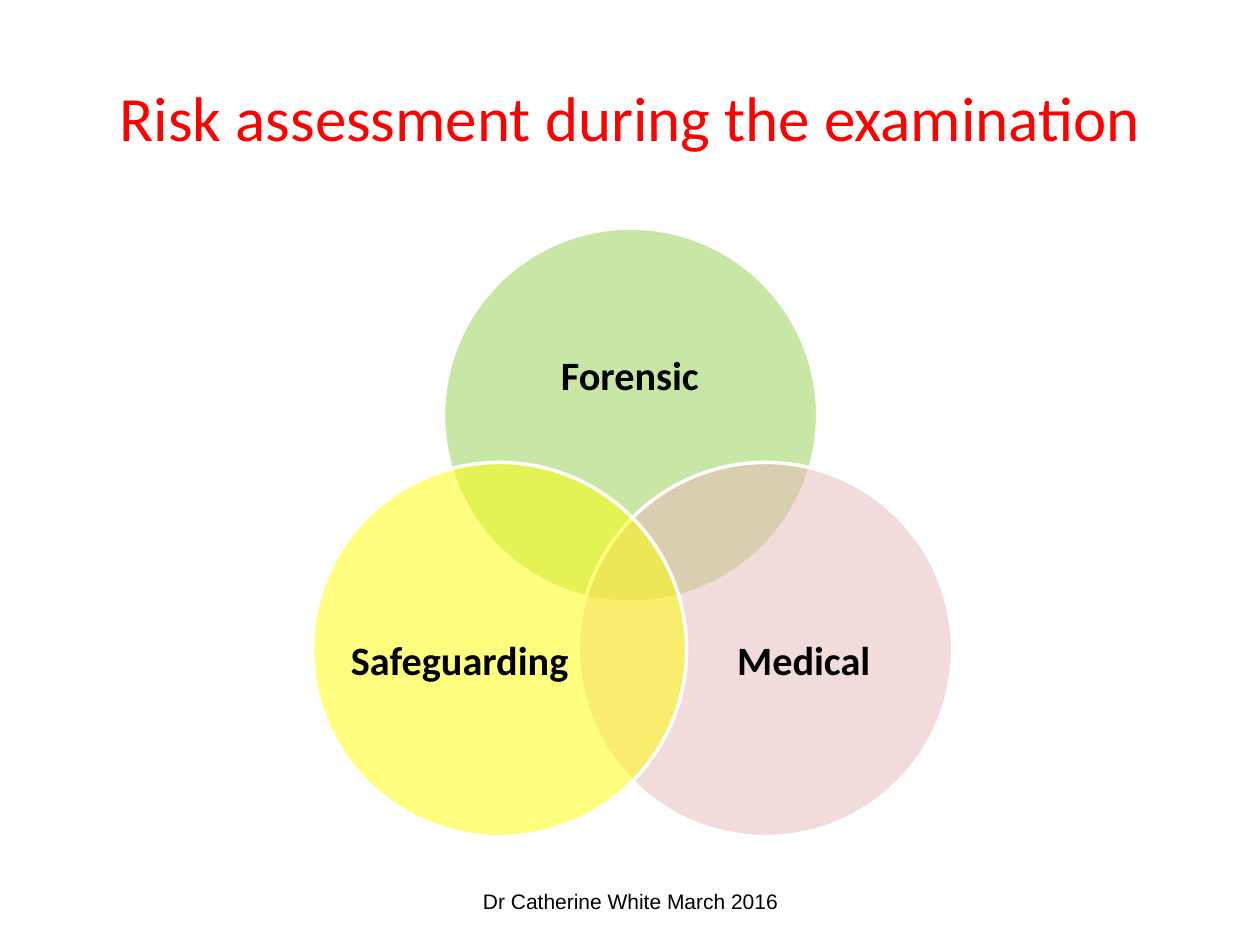
import pptx
import pptx.util
import pptx.dml.color
import pptx.enum.shapes
import pptx.enum.text
import pptx.oxml.ns
import lxml.etree

Inches = pptx.util.Inches
Pt = pptx.util.Pt
RGBColor = pptx.dml.color.RGBColor

RED = RGBColor(0xFF, 0x00, 0x00)
BLACK = RGBColor(0x00, 0x00, 0x00)
WHITE = RGBColor(0xFF, 0xFF, 0xFF)
GREEN = RGBColor(0x92, 0xD0, 0x50)
PINK = RGBColor(0xE6, 0xB9, 0xB8)
YELLOW = RGBColor(0xFF, 0xFF, 0x00)

TITLE = "Risk assessment during the examination"
FOOTER = "Dr Catherine White March 2016"
SIZE = 2.97
CIRCLES = [
    ("Forensic", GREEN, (3.52, 1.81), (3.91, 2.33, 2.18, 1.34)),
    ("Medical", PINK, (4.59, 3.67), (5.49, 4.44, 1.78, 1.63)),
    ("Safeguarding", YELLOW, (2.48, 3.67), (2.76, 4.44, 1.78, 1.63)),
]


def write(shape, text, size, font="Calibri", color=BLACK, bold=False,
          inset=None, spacing=None):
    frame = shape.text_frame
    frame.word_wrap = True
    frame.vertical_anchor = pptx.enum.text.MSO_ANCHOR.MIDDLE
    if inset is not None:
        frame.margin_left = frame.margin_right = Inches(inset)
        frame.margin_top = frame.margin_bottom = Inches(inset)
    para = frame.paragraphs[0]
    para.alignment = pptx.enum.text.PP_ALIGN.CENTER
    if spacing:
        para.line_spacing = spacing
    run = para.add_run()
    run.text = text
    run.font.size = Pt(size)
    run.font.name = font
    run.font.bold = bold
    run.font.color.rgb = color


def place(shape, *box):
    shape.left, shape.top, shape.width, shape.height = map(Inches, box)


def add_circle(shapes, color, left, top):
    oval = shapes.add_shape(pptx.enum.shapes.MSO_SHAPE.OVAL, Inches(left),
                            Inches(top), Inches(SIZE), Inches(SIZE))
    oval.shadow.inherit = False
    oval.fill.solid()
    oval.fill.fore_color.rgb = color
    oval.line.color.rgb = WHITE
    oval.line.width = Pt(2)
    qn = pptx.oxml.ns.qn
    tint = oval.fill._xPr.find(qn("a:solidFill")).find(qn("a:srgbClr"))
    lxml.etree.SubElement(tint, qn("a:alpha")).set("val", "50000")


def main():
    deck = pptx.Presentation()
    deck.slide_width, deck.slide_height = Inches(10), Inches(7.5)
    slide = deck.slides.add_slide(deck.slide_layouts[5])
    shapes = slide.shapes

    place(shapes.title, 0.5, 0.3, 9, 1.25)
    write(shapes.title, TITLE, 36, color=RED)

    venn = shapes.add_group_shape().shapes
    for name, color, spot, box in CIRCLES:
        add_circle(venn, color, *spot)
        label = venn.add_textbox(*map(Inches, box))
        write(label, name, 23, bold=True, inset=0, spacing=0.9)

    footer = shapes.add_textbox(*map(Inches, (3.42, 6.95, 3.17, 0.4)))
    write(footer, FOOTER, 12, font="Arial")
    deck.save("out.pptx")


if __name__ == "__main__":
    main()
